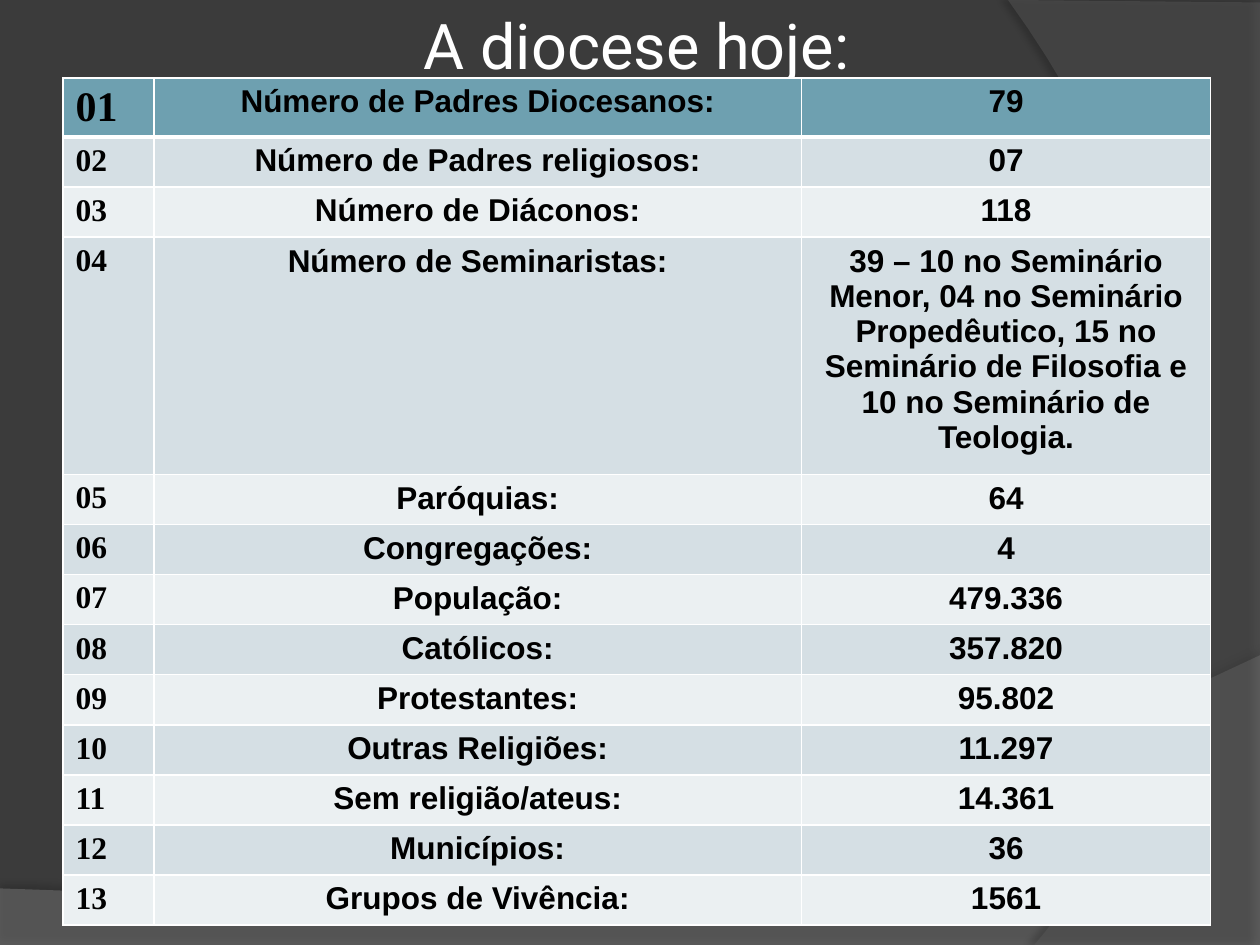
"""Build the slide that sums up the diocese in a table of thirteen rows."""
from lxml.etree import SubElement as Sub
from pptx import Presentation
from pptx.dml.color import RGBColor as Rgb
from pptx.enum.text import MSO_ANCHOR as Anchor, PP_ALIGN as Align
from pptx.oxml.ns import qn
from pptx.util import Cm, Pt

TITLE = "A diocese hoje:"
ROWS = [
    ("Número de Padres Diocesanos:", "79"),
    ("Número de Padres religiosos:", "07"),
    ("Número de Diáconos:", "118"),
    ("Número de Seminaristas:",
     "39 – 10 no Seminário Menor, 04 no Seminário Propedêutico, "
     "15 no Seminário de Filosofia e 10 no Seminário de Teologia."),
    ("Paróquias:", "64"),
    ("Congregações:", "4"),
    ("População:", "479.336"),
    ("Católicos:", "357.820"),
    ("Protestantes:", "95.802"),
    ("Outras Religiões:", "11.297"),
    ("Sem religião/ateus:", "14.361"),
    ("Municípios:", "36"),
    ("Grupos de Vivência:", "1561"),
]
WHITE, BLACK = Rgb(255, 255, 255), Rgb(0, 0, 0)
BACK = Rgb(0x3B, 0x3B, 0x3B)
HEAD = Rgb(0x6E, 0xA0, 0xB0)
BANDS = Rgb(0xEB, 0xF0, 0xF2), Rgb(0xD5, 0xDF, 0xE4)
COLS = 1.83, 13.06, 8.24
ROW, TALL = 1.01, 4.78
LEFT, TOP, WIDTH = 1.27, 1.57, sum(COLS)

WAVES = [
    {"line": [(0, 17.91), (0, 19.05), (25.4, 19.05), (25.4, 13.21)],
     "bend": [(14.2, 18.52), (9.93, 18.26), (0, 17.91)],
     "fill": Rgb(0x7F, 0x7F, 0x7F), "alpha": 45,
     "shade": 35, "dist": 3.5, "turn": 270},
    {"line": [(25.4, 0.05), (25.4, 19.05), (20.85, 19.05)],
     "bend": [(23.75, 15.72), (25.86, 7.62), (20.32, 0)],
     "fill": Rgb(0x5E, 0x5E, 0x5E), "alpha": 40,
     "shade": 45, "dist": 4, "turn": 180},
]


def style(item, look):
    for name, value in look.items():
        setattr(item, name, value)


def write(para, text, color, look):
    run = para.add_run()
    run.text = text
    style(run.font, look)
    run.font.color.rgb = color


def node(root, tag, **attrs):
    return Sub(root, qn(tag), {key: str(val) for key, val in attrs.items()})


def curve(ends, steps=40):
    for step in range(1, steps + 1):
        t = step / steps
        parts = (1 - t) ** 3, 3 * t * (1 - t) ** 2, 3 * t * t * (1 - t), t ** 3
        yield tuple(sum(k * p[axis] for k, p in zip(parts, ends))
                    for axis in (0, 1))


def add_wave(slide, wave):
    line = wave["line"]
    spots = line + list(curve([line[-1], *wave["bend"]]))
    start, *rest = [(Cm(x), Cm(y)) for x, y in spots]
    pen = slide.shapes.build_freeform(*start)
    pen.add_line_segments(rest, close=True)
    shape = pen.convert_to_shape()
    shape.fill.solid()
    shape.fill.fore_color.rgb = wave["fill"]
    shape.line.fill.background()
    shape.shadow.inherit = False
    props = shape.element.spPr
    tint = props.find(qn("a:solidFill"))[0]
    node(tint, "a:alpha", val=wave["alpha"] * 1000)
    shade = node(props.find(qn("a:effectLst")), "a:outerShdw",
                 blurRad=Pt(4), dist=Pt(wave["dist"]),
                 dir=wave["turn"] * 60000, rotWithShape=0)
    tint = node(shade, "a:srgbClr", val=BLACK)
    node(tint, "a:alpha", val=wave["shade"] * 1000)
    slide.shapes.title.element.addprevious(shape.element)


def add_edges(cell, row):
    props = cell._tc.get_or_add_tcPr()
    thick = {"T": 3 if row == 1 else 1, "B": 3 if row == 0 else 1}
    for side in "LRTB":
        edge = node(props, f"a:ln{side}", w=Pt(thick.get(side, 1)))
        node(node(edge, "a:solidFill"), "a:srgbClr", val=WHITE)


def add_grid(slide):
    tall = ROW * (len(ROWS) - 1) + TALL
    box = Cm(LEFT), Cm(TOP), Cm(WIDTH), Cm(tall)
    grid = slide.shapes.add_table(len(ROWS), len(COLS), *box).table
    for col, wide in zip(grid.columns, COLS):
        col.width = Cm(wide)
    for r, (label, value) in enumerate(ROWS):
        grid.rows[r].height = Cm(TALL if r == 3 else ROW)
        for c, text in enumerate((f"{r + 1:02}", label, value)):
            cell = grid.cell(r, c)
            add_edges(cell, r)
            cell.fill.solid()
            cell.fill.fore_color.rgb = BANDS[r % 2] if r else HEAD
            para = cell.text_frame.paragraphs[0]
            para.alignment = Align.CENTER if c else Align.LEFT
            write(para, text, BLACK, {
                "name": "Arial" if c else "Times New Roman",
                "size": Pt(18 if r or c else 24), "bold": True})


def add_title(slide):
    title = slide.shapes.title
    style(title, {"left": Cm(LEFT), "top": Cm(0),
                  "width": Cm(WIDTH), "height": Cm(1.78)})
    frame = title.text_frame
    sides = ("left", "right", "top", "bottom")
    style(frame, {f"margin_{side}": Cm(0.13) for side in sides})
    style(frame, {"vertical_anchor": Anchor.MIDDLE, "word_wrap": True})
    para = frame.paragraphs[0]
    para.alignment = Align.CENTER
    write(para, TITLE, WHITE, {"name": "Roboto", "size": Pt(36)})


def main():
    deck = Presentation()
    style(deck, {"slide_width": Cm(25.4), "slide_height": Cm(19.05)})
    slide = deck.slides.add_slide(deck.slide_layouts[5])
    slide.background.fill.solid()
    slide.background.fill.fore_color.rgb = BACK
    for wave in WAVES:
        add_wave(slide, wave)
    add_title(slide)
    add_grid(slide)
    deck.save("out.pptx")


if __name__ == "__main__":
    main()
